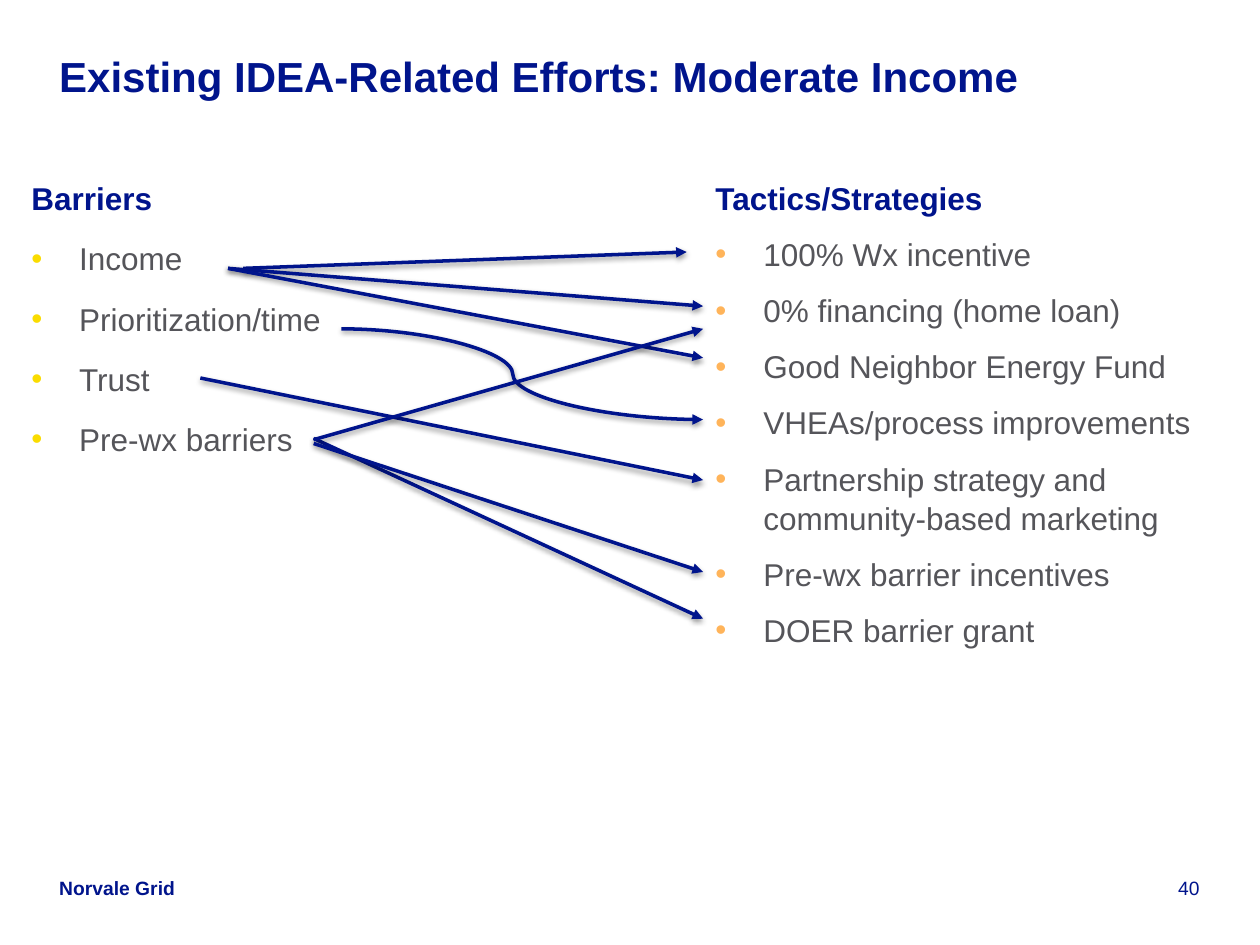
import lxml.etree
import pptx
import pptx.dml.color
import pptx.enum.shapes
import pptx.enum.text
import pptx.oxml.ns
import pptx.util

THEME = {
    "font": "Arial", "navy": "00148C", "grey": "55555A",
    "yellow": "FADC00", "orange": "FFB45A", "shadow": "000000",
    "title": 24, "body": 18, "footer": 11, "line": 2,
}
ALIGN = pptx.enum.text.PP_ALIGN
ANCHOR = pptx.enum.text.MSO_ANCHOR
CONNECTOR = pptx.enum.shapes.MSO_CONNECTOR

deck = pptx.Presentation()
deck.slide_width = pptx.util.Inches(10)
deck.slide_height = pptx.util.Inches(7.5)
page = deck.slides.add_slide(deck.slide_layouts[6])
# One percent of the slide's width and height
col, row = deck.slide_width / 100, deck.slide_height / 100


def add_element(parent, tag, **attributes):
    return lxml.etree.SubElement(parent, pptx.oxml.ns.qn(tag), attributes)


def add_text(area, lines, size, bold=True, align=ALIGN.LEFT, anchor=ANCHOR.TOP,
             inset=(0, 0), bullet=None, gap=0, spacing=None):
    """Write lines in a box; with a bullet colour, all after the first are bulleted."""
    left, top, width, height = area
    box = page.shapes.add_textbox(round(left * col), round(top * row),
                                  round(width * col), round(height * row))
    frame = box.text_frame
    frame.word_wrap = True
    frame.vertical_anchor = anchor
    frame.margin_left = frame.margin_right = pptx.util.Inches(inset[0])
    frame.margin_top = frame.margin_bottom = pptx.util.Inches(inset[1])
    for index, line in enumerate(lines):
        para = frame.paragraphs[0] if index == 0 else frame.add_paragraph()
        para.text = line
        para.alignment = align
        if spacing:
            para.line_spacing = spacing
        is_item = index > 0
        if is_item:
            para.space_before = pptx.util.Pt(gap)
            props = para._p.get_or_add_pPr()
            indent = pptx.util.Inches(0.38)
            props.set("marL", str(indent))
            props.set("indent", str(-indent))
            add_element(add_element(props, "a:buClr"), "a:srgbClr", val=bullet)
            add_element(props, "a:buFont", typeface=THEME["font"])
            add_element(props, "a:buChar", char="•")
        para.font.name = THEME["font"]
        para.font.size = pptx.util.Pt(size)
        para.font.bold = bold and not is_item
        para.font.color.rgb = pptx.dml.color.RGBColor.from_string(
            THEME["grey" if is_item else "navy"])


# Footer and title
add_text((89.4, 92.67, 5.8, 2.53), ["40"], THEME["footer"], bold=False,
         align=ALIGN.RIGHT, anchor=ANCHOR.BOTTOM)
add_text((4.7, 92.67, 12, 2.53), ["Norvale Grid"], THEME["footer"], anchor=ANCHOR.BOTTOM)
add_text((4.7, 5.33, 77.5, 5.33), ["Existing IDEA-Related Efforts: Moderate Income"],
         THEME["title"])

# Barriers on the left, tactics on the right
columns = [
    (1.5, 69.33, THEME["yellow"], 12,
     ["Barriers", "Income", "Prioritization/time", "Trust", "Pre-wx barriers"]),
    (55.8, 74.53, THEME["orange"], 9.6,
     ["Tactics/Strategies", "100% Wx incentive", "0% financing (home loan)",
      "Good Neighbor Energy Fund", "VHEAs/process improvements",
      "Partnership strategy and community-based marketing",
      "Pre-wx barrier incentives", "DOER barrier grant"]),
]
for left, height, bullet, gap, lines in columns:
    add_text((left, 18.13, 44.2, height), lines, THEME["body"], inset=(0.1, 0.05),
             bullet=bullet, gap=gap, spacing=1.04)

# Arrows from each barrier to its tactics: start, end, curve bend
tactics_x = 55.8
arrows = [
    ((19.3, 28.4), (54.5, 26.67), None),
    ((18.1, 28.4), (tactics_x, 32.4), None),
    ((18.1, 28.4), (tactics_x, 37.87), None),
    ((27.1, 34.8), (tactics_x, 44.4), 47400),
    ((24.9, 46.4), (tactics_x, 65.47), None),
    ((15.9, 40), (tactics_x, 50.8), None),
    ((24.9, 46.53), (tactics_x, 34.8), None),
    ((24.9, 46.93), (tactics_x, 60.53), None),
]
for (start_x, start_y), (end_x, end_y), bend in arrows:
    kind = CONNECTOR.CURVE if bend else CONNECTOR.STRAIGHT
    arrow = page.shapes.add_connector(kind, round(start_x * col), round(start_y * row),
                                      round(end_x * col), round(end_y * row))
    arrow.line.width = pptx.util.Pt(THEME["line"])
    arrow.line.color.rgb = pptx.dml.color.RGBColor.from_string(THEME["navy"])
    props = arrow._element.spPr
    add_element(props.find(pptx.oxml.ns.qn("a:ln")), "a:tailEnd", type="triangle")
    if bend:
        guides = next(props.iter(pptx.oxml.ns.qn("a:avLst")))
        add_element(guides, "a:gd", name="adj1", fmla=f"val {bend}")
    # Soft shadow straight below the line
    shadow = add_element(add_element(props, "a:effectLst"), "a:outerShdw",
                         blurRad=str(pptx.util.Pt(3.1)), dist=str(pptx.util.Pt(1.6)),
                         dir="5400000", rotWithShape="0")
    tint = add_element(shadow, "a:srgbClr", val=THEME["shadow"])
    add_element(tint, "a:alpha", val="38000")

deck.save("out.pptx")
